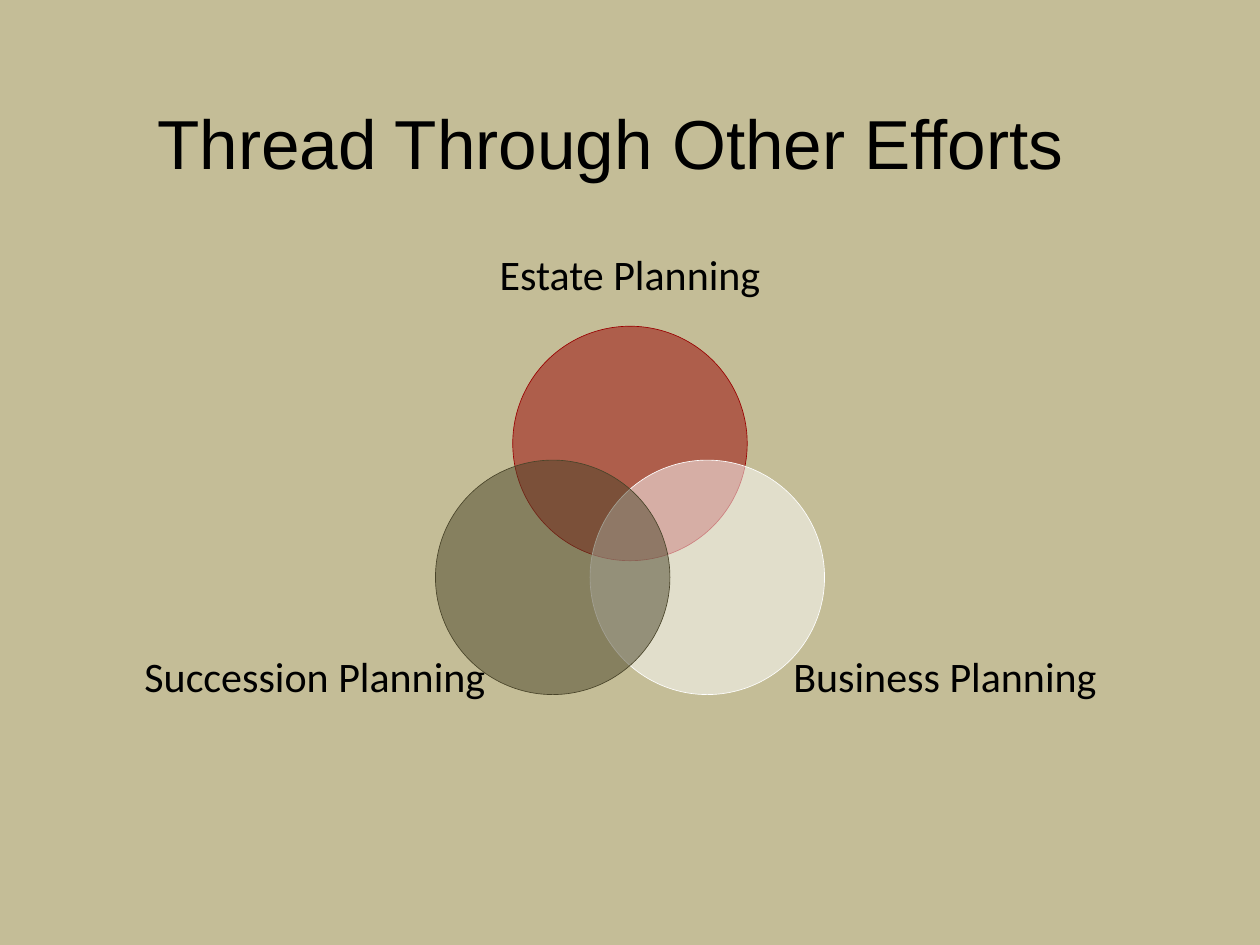
import math

import pptx
import pptx.dml.color
import pptx.enum.shapes
import pptx.enum.text
import pptx.oxml
import pptx.oxml.ns
import pptx.util

Pt = pptx.util.Pt
RGB = pptx.dml.color.RGBColor.from_string

THEME = {
    "background": "C4BD97", "text": "000000",
    "estate": "990000", "business": "FFFFFF", "succession": "494429",
    "title_font": "Arial", "title_size": 39.6,
    "label_font": "Calibri", "label_size": 24,
}


def write_text(shape, text, *, font, size, margin=None, wrap=True):
    """Fill a shape with one centred paragraph, anchored in the middle."""
    frame = shape.text_frame
    frame.word_wrap = wrap
    frame.auto_size = pptx.enum.text.MSO_AUTO_SIZE.NONE
    frame.vertical_anchor = pptx.enum.text.MSO_ANCHOR.MIDDLE
    if margin is not None:
        frame.margin_left = frame.margin_right = Pt(margin)
        frame.margin_top = frame.margin_bottom = Pt(margin)
    para = frame.paragraphs[0]
    para.alignment = pptx.enum.text.PP_ALIGN.CENTER
    span = para.add_run()
    span.text = text
    span.font.name = font
    span.font.size = Pt(size)
    span.font.color.rgb = RGB(THEME["text"])


# Page
deck = pptx.Presentation()
deck.slide_width, deck.slide_height = Pt(720), Pt(540)
page = deck.slides.add_slide(deck.slide_layouts[5])
page.background.fill.solid()
page.background.fill.fore_color.rgb = RGB(THEME["background"])

# Title; the closing tab shifts the centred line to the left
title = page.shapes.title
title.left, title.top, title.width, title.height = Pt(36), Pt(36), Pt(648), Pt(90)
write_text(title, "Thread Through Other Efforts\t",
           font=THEME["title_font"], size=THEME["title_size"])

# Venn diagram: circles spaced evenly around a centre, each with a label
CENTRE_X, CENTRE_Y, ORBIT = 360, 304.4, 51
DIAMETER, LABEL_HEIGHT = 134, 33
circles = [
    ("Estate Planning", "estate", -90, 360, 156.2),
    ("Business Planning", "business", 30, 540, 386),
    ("Succession Planning", "succession", 150, 180, 386),
]
for name, colour, degrees, label_x, label_y in circles:
    angle = math.radians(degrees)
    left = CENTRE_X + ORBIT * math.cos(angle) - DIAMETER / 2
    top = CENTRE_Y + ORBIT * math.sin(angle) - DIAMETER / 2
    circle = page.shapes.add_shape(pptx.enum.shapes.MSO_SHAPE.OVAL,
                                   Pt(left), Pt(top), Pt(DIAMETER), Pt(DIAMETER))
    circle.shadow.inherit = False
    circle.fill.solid()
    circle.fill.fore_color.rgb = RGB(THEME[colour])
    circle.line.color.rgb = RGB(THEME[colour])
    circle.line.width = Pt(0.37)

    # Half-transparent fill
    fill_colour = circle.fill._xPr.find(pptx.oxml.ns.qn("a:solidFill"))[0]
    alpha = pptx.oxml.parse_xml(f'<a:alpha {pptx.oxml.ns.nsdecls("a")} val="50000"/>')
    fill_colour.append(alpha)

    box = page.shapes.add_textbox(Pt(label_x - DIAMETER / 2), Pt(label_y - LABEL_HEIGHT / 2),
                                  Pt(DIAMETER), Pt(LABEL_HEIGHT))
    write_text(box, name, font=THEME["label_font"], size=THEME["label_size"],
               margin=0, wrap=False)

deck.save("out.pptx")
